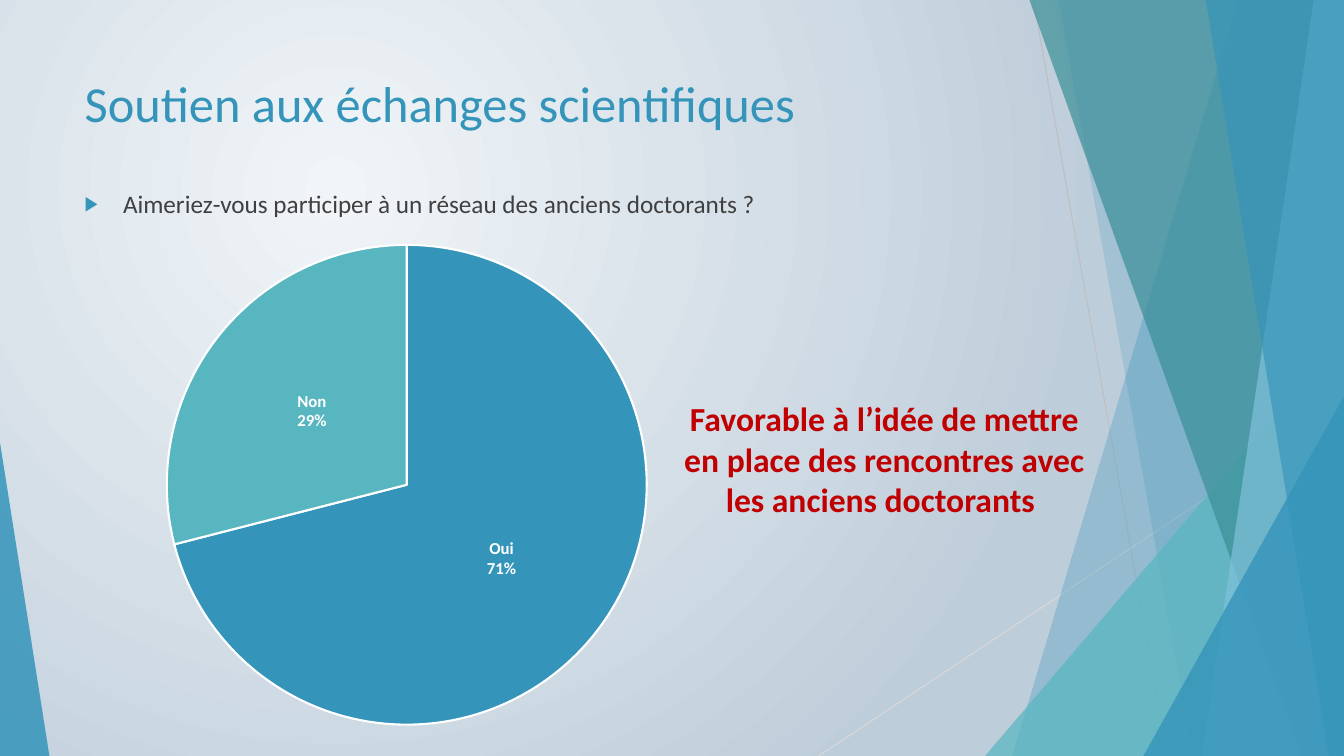
import pptx
import pptx.chart.data
import pptx.dml.color
import pptx.enum.chart
import pptx.enum.shapes
import pptx.enum.text
import pptx.oxml
import pptx.oxml.ns
import pptx.util
from pptx.util import Inches, Pt

WIDTH, HEIGHT = 13.33, 7.5
FONT = "Calibri"
COLORS = {
    "blue": "3494BA", "teal": "58B6C0", "deep teal": "3A8F98", "sky": "7FC1DB",
    "text": "404040", "red": "C00000", "white": "FFFFFF",
    "line": "BFBFBF", "pale line": "D9D9D9",
    "center": "F1F5F8", "edge": "BECDDA",
}
NAMESPACE = 'xmlns:a="http://schemas.openxmlformats.org/drawingml/2006/main"'


def rgb(name):
    return pptx.dml.color.RGBColor.from_string(COLORS[name])


def style_font(font, size, color, bold=False):
    font.name, font.size, font.bold = FONT, Pt(size), bold
    font.color.rgb = rgb(color)


presentation = pptx.Presentation()
presentation.slide_width, presentation.slide_height = Inches(WIDTH), Inches(HEIGHT)
slide = presentation.slides.add_slide(presentation.slide_layouts[1])
shapes = slide.shapes

# Background: circular gradient centred in the upper left quarter
background = slide.background.fill
background.gradient()
gradient = slide._element.find(".//" + pptx.oxml.ns.qn("a:gradFill"))
gradient.getparent().replace(gradient, pptx.oxml.parse_xml(
    f'<a:gradFill {NAMESPACE} rotWithShape="1"><a:gsLst>'
    f'<a:gs pos="0"><a:srgbClr val="{COLORS["center"]}"/></a:gs>'
    f'<a:gs pos="100000"><a:srgbClr val="{COLORS["edge"]}"/></a:gs></a:gsLst>'
    '<a:path path="circle"><a:fillToRect l="50000" t="50000" r="100000" b="100000"/></a:path>'
    '</a:gradFill>'))

# Thin crossing lines
for x1, y1, x2, y2, color in [
    (10.25, 0, 11.58, HEIGHT, "line"),
    (WIDTH, 4.03, 8.12, HEIGHT, "pale line"),
]:
    ray = shapes.add_connector(pptx.enum.shapes.MSO_CONNECTOR.STRAIGHT,
                               Inches(x1), Inches(y1), Inches(x2), Inches(y2))
    ray.line.color.rgb = rgb(color)
    ray.line.width = Pt(0.75)
    ray._element.spPr.append(pptx.oxml.parse_xml(f"<a:effectLst {NAMESPACE}/>"))

# Translucent facets, back to front. A band runs from its top and bottom x to the
# right edge; a triangle stands on the bottom edge: left, top, width, apex.
for kind, geometry, color, opacity in [
    ("band", (12.28, 10.04, WIDTH), "blue", 30),
    ("band", (10.5, 11.83, WIDTH), "blue", 20),
    ("triangle", (9.77, 3.33, 3.56, 1), "teal", 72),
    ("band", (10.21, 12.91, WIDTH), "deep teal", 70),
    ("band", (13.03, 11.92, WIDTH), "sky", 70),
    ("band", (11.96, 13.18, WIDTH), "blue", 65),
    ("triangle", (11.34, 3.93, 1.99, 1), "blue", 80),
    ("triangle", (0, 4.39, 0.49, 0), "blue", 85),
]:
    if kind == "band":
        top_x, bottom_x, right = map(Inches, geometry)
        outline = shapes.build_freeform(top_x, 0)
        outline.add_line_segments(
            [(right, 0), (right, Inches(HEIGHT)), (bottom_x, Inches(HEIGHT))])
        facet = outline.convert_to_shape()
    else:
        left, top, width, apex = geometry
        facet = shapes.add_shape(pptx.enum.shapes.MSO_SHAPE.ISOSCELES_TRIANGLE,
                                 Inches(left), Inches(top), Inches(width), Inches(HEIGHT - top))
        facet.adjustments[0] = apex
    facet.shadow.inherit = False
    facet.line.fill.background()
    facet.fill.solid()
    facet.fill.fore_color.rgb = rgb(color)
    facet._element.spPr.find(".//" + pptx.oxml.ns.qn("a:srgbClr")).append(
        pptx.oxml.parse_xml(f'<a:alpha {NAMESPACE} val="{opacity * 1000}"/>'))

# Title, question and conclusion
title, question = shapes.title, slide.placeholders[1]
conclusion = shapes.add_textbox(0, 0, 0, 0)
align = pptx.enum.text.PP_ALIGN
for box, place, text, size, color, bold, alignment, space in [
    (title, (0.74, 0.67, 9.4, 1.44), "Soutien aux échanges scientifiques",
     36, "blue", False, align.LEFT, 0),
    (question, (0.74, 1.82, 7.31, 0.93),
     "Aimeriez-vous participer à un réseau des anciens doctorants ?",
     18, "text", False, align.LEFT, 10),
    (conclusion, (6.66, 3.9, 4.22, 2.09),
     "Favorable à l’idée de mettre en place des rencontres avec les anciens doctorants ",
     24, "red", True, align.CENTER, 10),
]:
    box.left, box.top, box.width, box.height = map(Inches, place)
    frame = box.text_frame
    frame.text = text
    frame.word_wrap = True
    frame.auto_size = pptx.enum.text.MSO_AUTO_SIZE.NONE
    frame.vertical_anchor = pptx.enum.text.MSO_ANCHOR.TOP
    paragraph = frame.paragraphs[0]
    paragraph.alignment = alignment
    paragraph.space_before = Pt(space)
    style_font(paragraph.runs[0].font, size, color, bold)

bullet = question.text_frame.paragraphs[0]._p.get_or_add_pPr()
bullet.set("marL", str(Inches(0.38)))
bullet.set("indent", str(Inches(-0.38)))
for markup in [
    f'<a:buClr {NAMESPACE}><a:srgbClr val="{COLORS["blue"]}"/></a:buClr>',
    f'<a:buSzPct {NAMESPACE} val="80000"/>',
    f'<a:buFont {NAMESPACE} typeface="Arial"/>',
    f'<a:buChar {NAMESPACE} char="▶"/>',
]:
    bullet.append(pptx.oxml.parse_xml(markup))

# Pie of the answers
answers = pptx.chart.data.CategoryChartData(number_format="0%")
answers.categories = ["Oui", "Non"]
answers.add_series("Series 1", [0.71, 0.29])
pie = shapes.add_chart(pptx.enum.chart.XL_CHART_TYPE.PIE, Inches(1.33), Inches(2.29),
                       Inches(5.41), Inches(5.04), answers).chart
pie.has_legend = False
pie.has_title = False
style_font(pie.font, 10, "text")
plot = pie.plots[0]
plot.vary_by_categories = True
for index, color in enumerate(["blue", "teal"]):
    slice_format = plot.series[0].points[index].format
    slice_format.fill.solid()
    slice_format.fill.fore_color.rgb = rgb(color)
    slice_format.line.color.rgb = rgb("white")
    slice_format.line.width = Pt(1.5)

plot.has_data_labels = True
labels = plot.data_labels
style_font(labels.font, 12, "white", True)
labels.show_category_name = True
labels.show_value = True
labels.show_percentage = False
labels.number_format = "0%"
labels.number_format_is_linked = False
labels.position = pptx.enum.chart.XL_LABEL_POSITION.CENTER
chart_ns = 'xmlns:c="http://schemas.openxmlformats.org/drawingml/2006/chart"'
labels._element.find(pptx.oxml.ns.qn("c:showBubbleSize")).addnext(
    pptx.oxml.parse_xml(f"<c:separator {chart_ns}>\n</c:separator>"))

plot_area = pie._chartSpace.chart.plotArea
for layout in plot_area.findall(pptx.oxml.ns.qn("c:layout")):
    plot_area.remove(layout)
plot_area.insert(0, pptx.oxml.parse_xml(
    f'<c:layout {chart_ns}><c:manualLayout><c:layoutTarget val="inner"/>'
    '<c:xMode val="edge"/><c:yMode val="edge"/><c:x val="0.06"/><c:y val="0.02"/>'
    '<c:w val="0.88"/><c:h val="0.96"/></c:manualLayout></c:layout>'))

presentation.save("out.pptx")
